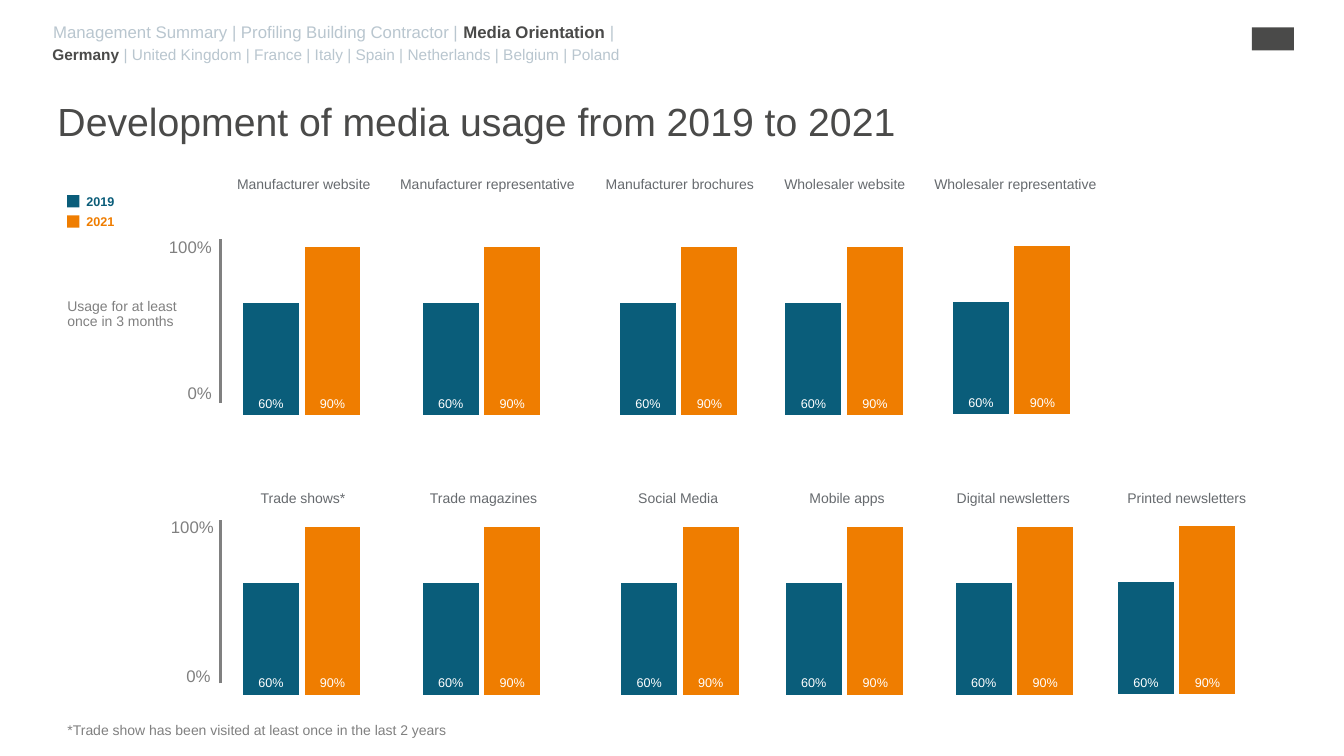
from dataclasses import dataclass
from typing import Any

from lxml.etree import SubElement
from pptx import Presentation
from pptx.chart.data import CategoryChartData
from pptx.dml.color import RGBColor
from pptx.enum.chart import XL_CHART_TYPE, XL_LABEL_POSITION
from pptx.enum.shapes import MSO_CONNECTOR, MSO_SHAPE
from pptx.enum.text import MSO_ANCHOR, PP_ALIGN
from pptx.oxml.ns import qn
from pptx.slide import Slide
from pptx.util import Cm, Pt

COLORS = {
    "blue": "0A5D7A",
    "orange": "EF7D00",
    "dark": "4A4A49",
    "gray": "808080",
    "heading": "666A6E",
    "muted": "B9C6CF",
    "white": "FFFFFF",
}
YEAR_COLORS = {"2019": "blue", "2021": "orange"}
USAGE = (0.6, 0.9)
CHART_WIDTH, CHART_HEIGHT = 3.23, 4.9
AXIS_LEFT = 5.56
HEADING_HEIGHT = 0.69


@dataclass(frozen=True)
class Run:
    text: str
    size: float
    color: str
    bold: bool = False


@dataclass(frozen=True)
class Label:
    left: float
    top: float
    width: float
    height: float
    runs: tuple[Run, ...]
    align: PP_ALIGN = PP_ALIGN.LEFT
    anchor: MSO_ANCHOR = MSO_ANCHOR.MIDDLE
    inset: bool = False
    wrap: bool = True
    line_spacing: float = 0.9


@dataclass(frozen=True)
class Heading:
    text: str
    width: float
    chart_left: float
    chart_top: float


@dataclass(frozen=True)
class MediaRow:
    left: float
    top: float
    align: PP_ALIGN
    line_spacing: float
    axis_top: float
    axis_bottom: float
    headings: tuple[Heading, ...]


ROWS = (
    MediaRow(5.72, 4.34, PP_ALIGN.LEFT, 1.0, 6.02, 10.16, (
        Heading("Manufacturer website", 4.11, 5.99, 5.66),
        Heading("Manufacturer representative", 5.18, 10.52, 5.66),
        Heading("Manufacturer brochures", 4.5, 15.49, 5.66),
        Heading("Wholesaler website", 3.78, 19.66, 5.66),
        Heading("Wholesaler representative", 4.88, 23.88, 5.64),
    )),
    MediaRow(5.36, 12.27, PP_ALIGN.CENTER, 0.9, 13.11, 17.22, (
        Heading("Trade shows*", 4.55, 5.99, 12.71),
        Heading("Trade magazines", 4.55, 10.52, 12.71),
        Heading("Social Media", 5.26, 15.52, 12.71),
        Heading("Mobile apps", 3.25, 19.67, 12.71),
        Heading("Digital newsletters", 5.13, 23.95, 12.71),
        Heading("Printed newsletters", 3.61, 28.04, 12.69),
    )),
)


def scale_label(text: str, left: float, top: float) -> Label:
    return Label(left, top, 1.83, 0.76, (Run(text, 12, "gray"),), PP_ALIGN.RIGHT,
                 MSO_ANCHOR.TOP, inset=True, line_spacing=1.0)


LABELS = (
    scale_label("100%", 3.76, 5.84),
    scale_label("0%", 3.76, 9.53),
    scale_label("100%", 3.81, 12.9),
    scale_label("0%", 3.73, 16.66),
    Label(1.7, 6.35, 3.4, 3.15, (Run("Usage for at least once in 3 months", 10, "gray"),)),
    Label(1.7, 18.14, 14.58, 0.58, (
        Run("*Trade show has been visited at least once in the last 2 years", 10, "gray"),
    ), wrap=False),
    Label(1.32, 1.22, 28.98, 0.53, (
        Run("Germany ", 11, "dark", True),
        Run("| United Kingdom | France | Italy | Spain | Netherlands | Belgium | Poland", 11, "muted"),
    ), anchor=MSO_ANCHOR.TOP, line_spacing=0.8),
    Label(1.09, 0.36, 22.3, 0.94, (
        Run("Management Summary | Profiling Building Contractor | ", 12, "muted"),
        Run("Media Orientation ", 12, "dark", True),
        Run("|", 12, "muted"),
    ), inset=True),
    Label(1.45, 2.21, 30.68, 1.83, (
        Run("Development of media usage from 2019 to 2021", 28, "dark"),
    )),
)


def rgb(color: str) -> RGBColor:
    return RGBColor.from_string(COLORS[color])


def apply_format(target: Any, values: dict[str, Any]) -> None:
    for name, value in values.items():
        setattr(target, name, value)


def format_font(font: Any, size: float, color: str, bold: bool = False) -> None:
    apply_format(font, {"name": "Arial", "size": Pt(size), "bold": bold})
    font.color.rgb = rgb(color)


def add_label(slide: Slide, label: Label) -> None:
    box = slide.shapes.add_textbox(Cm(label.left), Cm(label.top), Cm(label.width), Cm(label.height))
    frame = box.text_frame
    apply_format(frame, {"word_wrap": label.wrap, "vertical_anchor": label.anchor})
    if not label.inset:
        sides = ("left", "top", "right", "bottom")
        apply_format(frame, {f"margin_{side}": Cm(0) for side in sides})
    paragraph = frame.paragraphs[0]
    apply_format(paragraph, {"alignment": label.align, "line_spacing": label.line_spacing})
    for part in label.runs:
        run = paragraph.add_run()
        run.text = part.text
        format_font(run.font, part.size, part.color, part.bold)


def add_block(slide: Slide, left: float, top: float, width: float, height: float, color: str) -> None:
    block = slide.shapes.add_shape(MSO_SHAPE.RECTANGLE, Cm(left), Cm(top), Cm(width), Cm(height))
    block.shadow.inherit = False
    block.fill.solid()
    block.fill.fore_color.rgb = rgb(color)
    block.line.fill.background()


def add_axis(slide: Slide, row: MediaRow) -> None:
    axis = slide.shapes.add_connector(
        MSO_CONNECTOR.STRAIGHT, Cm(AXIS_LEFT), Cm(row.axis_bottom), Cm(AXIS_LEFT), Cm(row.axis_top))
    axis.line.color.rgb = rgb("gray")
    axis.line.width = Pt(1.75)
    SubElement(axis._element.spPr, qn("a:effectLst"))


def add_usage_chart(slide: Slide, heading: Heading) -> None:
    data = CategoryChartData(number_format="0%")
    data.categories = ["1", "2"]
    data.add_series("Series 1", USAGE)
    chart = slide.shapes.add_chart(
        XL_CHART_TYPE.COLUMN_CLUSTERED, Cm(heading.chart_left), Cm(heading.chart_top),
        Cm(CHART_WIDTH), Cm(CHART_HEIGHT), data).chart
    apply_format(chart, {"has_title": False, "has_legend": False})
    apply_format(chart.font, {"name": "Arial", "size": Pt(10)})
    apply_format(chart.value_axis, {"minimum_scale": 0, "maximum_scale": 1,
                                    "has_major_gridlines": False, "visible": False})
    chart.category_axis.visible = False
    plot = chart.plots[0]
    apply_format(plot, {"gap_width": 10, "overlap": -27, "vary_by_categories": False,
                        "has_data_labels": True})
    apply_format(plot.data_labels, {"show_value": True, "number_format": "0%",
                                    "number_format_is_linked": False,
                                    "position": XL_LABEL_POSITION.INSIDE_BASE})
    format_font(plot.data_labels.font, 9, "white")
    for index, color in enumerate(YEAR_COLORS.values()):
        fill = plot.series[0].points[index].format.fill
        fill.solid()
        fill.fore_color.rgb = rgb(color)


def add_headings(slide: Slide, row: MediaRow) -> None:
    width = sum(heading.width for heading in row.headings)
    table = slide.shapes.add_table(
        1, len(row.headings), Cm(row.left), Cm(row.top), Cm(width), Cm(HEADING_HEIGHT)).table
    apply_format(table, {"first_row": False, "horz_banding": False})
    for column, cell, heading in zip(table.columns, table.rows[0].cells, row.headings):
        column.width = Cm(heading.width)
        cell.fill.background()
        paragraph = cell.text_frame.paragraphs[0]
        apply_format(paragraph, {"alignment": row.align, "line_spacing": row.line_spacing})
        run = paragraph.add_run()
        run.text = heading.text
        format_font(run.font, 10, "heading")


def add_legend(slide: Slide) -> None:
    for index, (year, color) in enumerate(YEAR_COLORS.items()):
        top = 4.92 + 0.51 * index
        add_block(slide, 1.69, top, 0.31, 0.31, color)
        add_label(slide, Label(2.18, top - 0.02, 1.47, 0.38, (Run(year, 9, color, True),)))


def main() -> None:
    presentation = Presentation()
    apply_format(presentation, {"slide_width": Cm(33.87), "slide_height": Cm(19.05)})
    slide = presentation.slides.add_slide(presentation.slide_layouts[6])
    add_block(slide, 31.55, 0.69, 1.06, 0.58, "dark")
    for row in ROWS:
        add_axis(slide, row)
        for heading in row.headings:
            add_usage_chart(slide, heading)
        add_headings(slide, row)
    for label in LABELS:
        add_label(slide, label)
    add_legend(slide)
    presentation.save("out.pptx")


if __name__ == "__main__":
    main()
